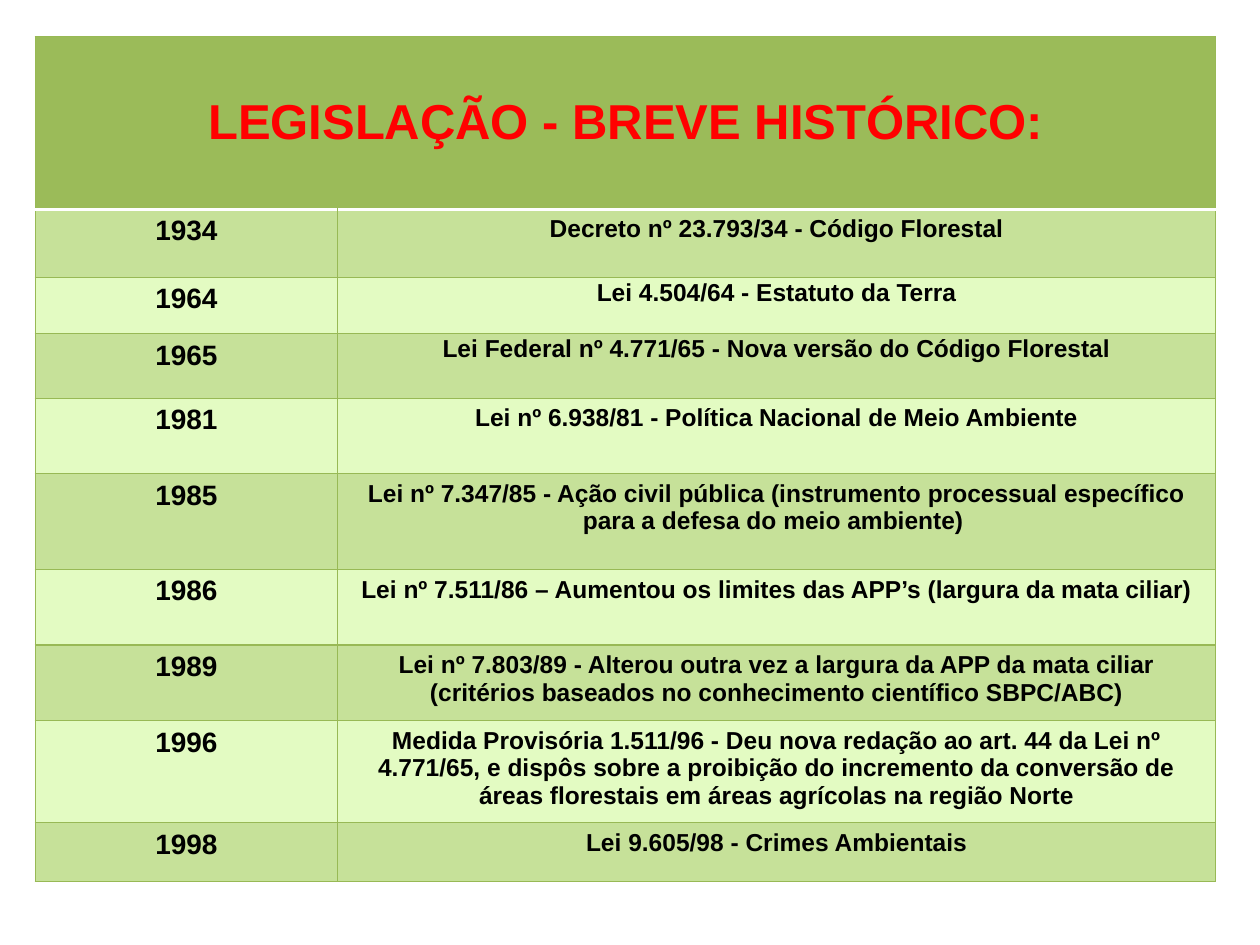
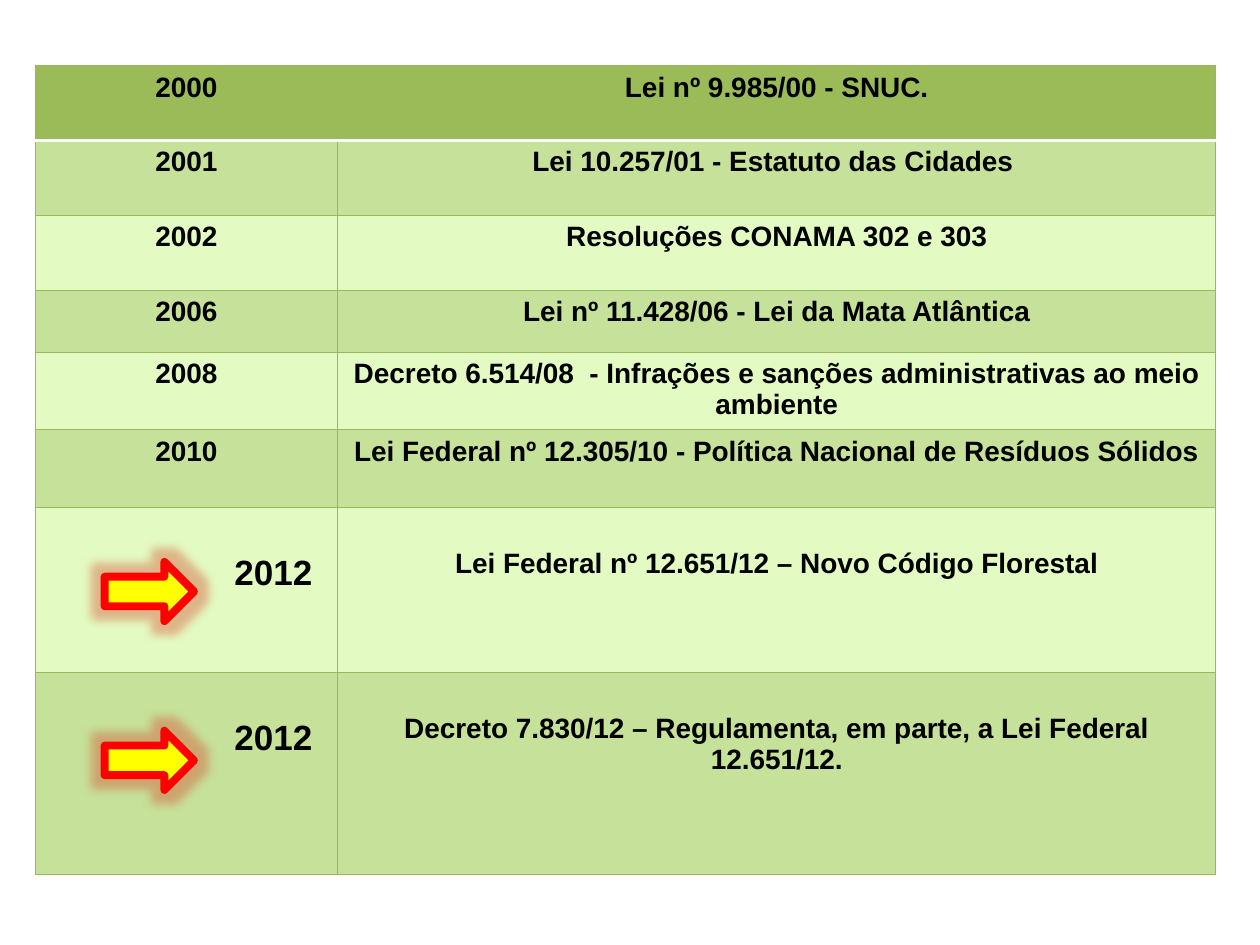
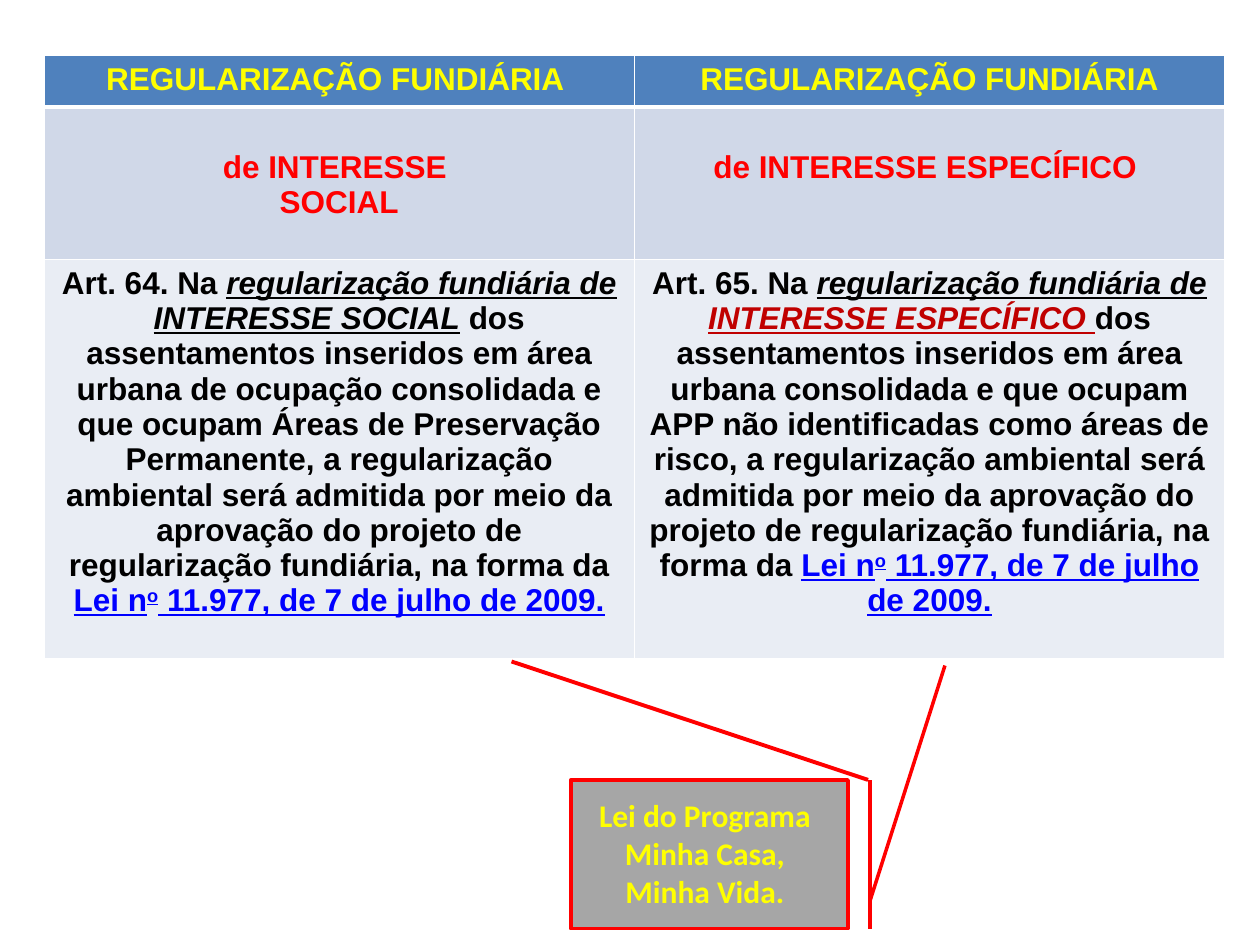
from dataclasses import dataclass
from typing import Optional

from lxml.etree import SubElement
from pptx import Presentation
from pptx.dml.color import RGBColor
from pptx.enum.shapes import MSO_CONNECTOR, MSO_SHAPE
from pptx.enum.text import MSO_ANCHOR, PP_ALIGN
from pptx.oxml import parse_xml
from pptx.oxml.ns import nsdecls, qn
from pptx.util import Emu, Inches, Pt

# Shared look
COLORS = {
    "black": "000000", "white": "FFFFFF", "red": "FF0000", "dark red": "C00000",
    "yellow": "FFFF00", "gray": "A6A6A6", "link": "0000FF", "glow": "D94A30",
    "green": "9BBB59", "green line": "98B955",
    "green band": "C6E199", "green light": "E3FBC2",
    "blue": "4F81BD", "blue band": "D0D8E8", "blue light": "E9EDF4",
}
FONT = "Arial"

# Grid: 100 columns by 75 rows on the whole slide
WIDTH, HEIGHT = Inches(10), Inches(7.5)
COLUMNS, ROWS = 100, 75
TIMELINE_LEFT = 2.8
TIMELINE_COLUMNS = (24, 69.7)


def across(columns: float) -> Emu:
    return Emu(round(WIDTH * columns / COLUMNS))


def down(rows: float) -> Emu:
    return Emu(round(HEIGHT * rows / ROWS))


def rgb(name: str) -> RGBColor:
    return RGBColor.from_string(COLORS[name])


@dataclass(frozen=True)
class Run:
    text: str
    color: Optional[str] = None
    italic: bool = False
    underline: bool = False
    superscript: bool = False


@dataclass(frozen=True)
class Law:
    year: str
    text: str
    height: float
    spacing: Optional[float] = None
    highlighted: bool = False


@dataclass(frozen=True)
class Regularization:
    header: str
    interest: tuple[str, ...]
    article: tuple[Run, ...]


# Text
def write(frame, *paragraphs, size: float = 16, color: str = "black", font: str = FONT,
          align=PP_ALIGN.CENTER, spacing: Optional[float] = None) -> None:
    """Write bold paragraphs, each a string or a tuple of runs."""
    frame.word_wrap = True
    for index, content in enumerate(paragraphs):
        paragraph = frame.paragraphs[0] if index == 0 else frame.add_paragraph()
        paragraph.alignment = align
        if spacing:
            paragraph.line_spacing = spacing
        for part in (Run(content),) if isinstance(content, str) else content:
            run = paragraph.add_run()
            run.text = part.text
            run.font.name, run.font.size, run.font.bold = font, Pt(size), True
            run.font.italic, run.font.underline = part.italic, part.underline
            run.font.color.rgb = rgb(part.color or color)
            if part.superscript:
                run.font._element.set("baseline", "30000")


# Tables
def add_grid(slide, left: float, top: float, columns, rows):
    frame = slide.shapes.add_table(len(rows), len(columns), across(left), down(top),
                                   across(sum(columns)), down(sum(rows)))
    table = frame.table
    table.first_row = table.horz_banding = False
    for column, width in zip(table.columns, columns):
        column.width = across(width)
    for row, height in zip(table.rows, rows):
        row.height = down(height)
    return table


def set_borders(cell, sides: dict[str, tuple[str, float]]) -> None:
    properties = cell._tc.get_or_add_tcPr()
    for position, side in enumerate("LRTB"):
        color, width = sides[side]
        properties.insert(position, parse_xml(
            f'<a:ln{side} {nsdecls("a")} w="{Pt(width)}"><a:solidFill>'
            f'<a:srgbClr val="{COLORS[color]}"/></a:solidFill></a:ln{side}>'))


def style_rows(table, fills, line: tuple[str, float], rule: tuple[str, float]) -> None:
    """Fill row by row; the rule parts the header from the body."""
    for index, (row, fill) in enumerate(zip(table.rows, fills)):
        for cell in row.cells:
            cell.fill.solid()
            cell.fill.fore_color.rgb = rgb(fill)
            set_borders(cell, {"L": line, "R": line,
                               "T": rule if index == 1 else line,
                               "B": rule if index == 0 else line})


def add_timeline(slide, top: float, laws, size: float, title: str = "",
                 title_height: float = 0) -> None:
    heights = [law.height for law in laws]
    if title:
        heights.insert(0, title_height)
    table = add_grid(slide, TIMELINE_LEFT, top, TIMELINE_COLUMNS, heights)
    bands = ["green band" if i % 2 == 0 else "green light" for i in range(len(heights) - 1)]
    style_rows(table, ["green"] + bands, ("green line", 0.75), ("white", 2))
    if title:
        header = table.cell(0, 0)
        header.merge(table.cell(0, 1))
        header.vertical_anchor = MSO_ANCHOR.MIDDLE
        write(header.text_frame, title, size=28, color="red")
    for index, law in enumerate(laws, start=1 if title else 0):
        year, text = table.cell(index, 0), table.cell(index, 1)
        if law.highlighted:
            year.margin_top, text.margin_top = down(3.7), down(3.2)
            year.margin_right = across(2)
            write(year.text_frame, law.year, size=20, align=PP_ALIGN.RIGHT)
        else:
            write(year.text_frame, law.year)
        write(text.text_frame, law.text, size=size, spacing=law.spacing)


# Shapes
def paint(shape, fill: str, line: str, width: float) -> None:
    shape.shadow.inherit = False
    shape.fill.solid()
    shape.fill.fore_color.rgb = rgb(fill)
    shape.line.color.rgb = rgb(line)
    shape.line.width = Pt(width)


def add_glowing_arrow(slide, top: float) -> None:
    arrow = slide.shapes.add_shape(MSO_SHAPE.RIGHT_ARROW, across(8.3), down(top),
                                   across(7.1), down(4.7))
    paint(arrow, "yellow", "red", 4.5)
    effects = arrow._element.spPr.find(qn("a:effectLst"))
    glow = SubElement(effects, qn("a:glow"), rad=str(Pt(11)))
    color = SubElement(glow, qn("a:srgbClr"), val=COLORS["glow"])
    SubElement(color, qn("a:alpha"), val="40000")


def add_line(slide, start: tuple[float, float], end: tuple[float, float]) -> None:
    line = slide.shapes.add_connector(MSO_CONNECTOR.STRAIGHT, across(start[0]), down(start[1]),
                                      across(end[0]), down(end[1]))
    line.line.color.rgb = rgb("red")
    line.line.width = Pt(2.25)
    SubElement(line._element.spPr, qn("a:effectLst"))


# Content
EARLY_LAWS = (
    Law("1934", "Decreto nº 23.793/34 - Código Florestal", 5.4),
    Law("1964", "Lei 4.504/64 - Estatuto da Terra", 4.5, spacing=0.8),
    Law("1965", "Lei Federal nº 4.771/65 - Nova versão do Código Florestal", 5.1, spacing=0.8),
    Law("1981", "Lei nº 6.938/81 - Política Nacional de Meio Ambiente", 6),
    Law("1985", "Lei nº 7.347/85 - Ação civil pública (instrumento processual específico "
                "para a defesa do meio ambiente) ", 7.6),
    Law("1986", "Lei nº 7.511/86 – Aumentou os limites das APP’s (largura da mata ciliar)", 6),
    Law("1989", "Lei nº 7.803/89 - Alterou outra vez a largura da APP da mata ciliar "
                "(critérios baseados no conhecimento científico SBPC/ABC)", 6),
    Law("1996", "Medida Provisória 1.511/96 - Deu nova redação ao art. 44 da Lei nº 4.771/65, "
                "e dispôs sobre a proibição do incremento da conversão de áreas florestais "
                "em áreas agrícolas na região Norte", 8.1),
    Law("1998", "Lei 9.605/98 - Crimes Ambientais", 4.7),
)
RECENT_LAWS = (
    Law("2000", "Lei nº 9.985/00 - SNUC.", 5.95),
    Law("2001", "Lei 10.257/01 - Estatuto das Cidades ", 5.95),
    Law("2002", "Resoluções CONAMA 302 e 303", 5.95),
    Law("2006", "Lei nº 11.428/06 - Lei da Mata Atlântica", 4.9),
    Law("2008", "Decreto 6.514/08  - Infrações e sanções administrativas ao meio ambiente", 6.15),
    Law("2010", "Lei Federal nº 12.305/10 - Política Nacional de Resíduos Sólidos", 6.2),
    Law("2012", "Lei Federal nº 12.651/12 – Novo Código Florestal", 13.1, highlighted=True),
    Law("2012", "Decreto 7.830/12 – Regulamenta, em parte, a Lei Federal 12.651/12.", 16,
        highlighted=True),
)
LAW_LINK = (
    Run("Lei n", "link", underline=True),
    Run("o", "link", underline=True, superscript=True),
    Run(" 11.977, de 7 de julho de 2009.", "link", underline=True),
)
REGULARIZATIONS = (
    Regularization("REGULARIZAÇÃO FUNDIÁRIA ", ("de INTERESSE ", "SOCIAL"), (
        Run("Art. 64. Na "),
        Run("regularização fundiária de INTERESSE SOCIAL", italic=True, underline=True),
        Run(" dos assentamentos inseridos em área urbana de ocupação consolidada e que ocupam "
            "Áreas de Preservação Permanente, a regularização ambiental será admitida por meio "
            "da aprovação do projeto de regularização fundiária, na forma da "),
        *LAW_LINK)),
    Regularization("REGULARIZAÇÃO FUNDIÁRIA", ("de INTERESSE ESPECÍFICO ",), (
        Run("Art. 65. Na "),
        Run("regularização fundiária de ", italic=True, underline=True),
        Run("INTERESSE ESPECÍFICO ", "dark red", italic=True, underline=True),
        Run("dos assentamentos inseridos em área urbana consolidada e que ocupam APP não "
            "identificadas como áreas de risco, a regularização ambiental será admitida por meio "
            "da aprovação do projeto de regularização fundiária, na forma da "),
        *LAW_LINK)),
)


# Slides
def build_early_laws(slide) -> None:
    add_timeline(slide, 2.9, EARLY_LAWS, size=14,
                 title="LEGISLAÇÃO - BREVE HISTÓRICO:", title_height=13.7)


def build_recent_laws(slide) -> None:
    add_timeline(slide, 5.2, RECENT_LAWS, size=16)
    for top in (58, 44.6):
        add_glowing_arrow(slide, top)


def build_regularization(slide) -> None:
    table = add_grid(slide, 3.5, 4.4, (46.85, 46.85), (4.1, 12.1, 31.7))
    style_rows(table, ("blue", "blue band", "blue light"), ("white", 1), ("white", 3))
    for column, item in enumerate(REGULARIZATIONS):
        header, interest, article = (table.cell(row, column) for row in range(3))
        write(header.text_frame, item.header, size=18, color="yellow")
        interest.margin_top = down(3.4)
        write(interest.text_frame, *item.interest, size=18, color="red")
        write(article.text_frame, item.article, size=18)

    # Callout with its two leaders
    callout = slide.shapes.add_shape(MSO_SHAPE.LINE_CALLOUT_1_BORDER_AND_ACCENT_BAR,
                                     across(45.3), down(61.9), across(22), down(11.8))
    callout.rotation = 180
    for index, value in enumerate((0.19, -0.08, 1.77, -0.35)):
        callout.adjustments[index] = value
    paint(callout, "gray", "red", 2)
    label = slide.shapes.add_textbox(across(46.1), down(62.7), across(19.7), down(10.1))
    write(label.text_frame, "Lei do Programa Minha Casa, Minha Vida.", size=18,
          color="yellow", font="Calibri")
    add_line(slide, (68.9, 61.9), (40.6, 52.5))


def main() -> None:
    presentation = Presentation()
    presentation.slide_width, presentation.slide_height = WIDTH, HEIGHT
    blank = presentation.slide_layouts[6]
    for build in (build_early_laws, build_recent_laws, build_regularization):
        build(presentation.slides.add_slide(blank))
    presentation.save("out.pptx")


if __name__ == "__main__":
    main()
